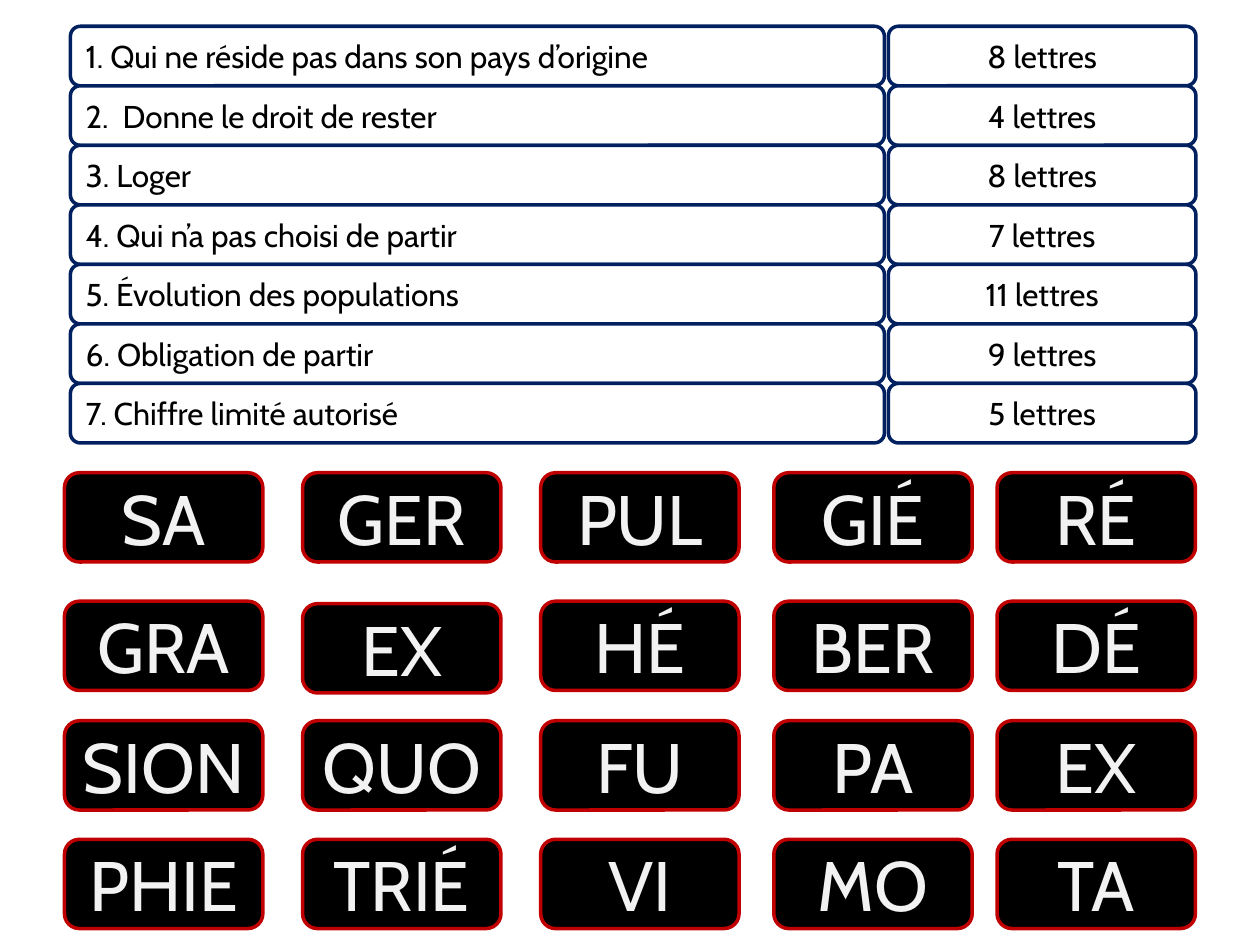
from dataclasses import dataclass

from pptx import Presentation
from pptx.dml.color import RGBColor
from pptx.enum.shapes import MSO_SHAPE
from pptx.enum.text import MSO_ANCHOR, PP_ALIGN
from pptx.util import Cm, Pt


@dataclass(frozen=True)
class BoxStyle:
    fill: RGBColor
    line: RGBColor
    text: RGBColor
    size: Pt


@dataclass(frozen=True)
class Theme:
    font = "Cabin"
    line_width = Pt(2)
    clue = BoxStyle(RGBColor(0xFF, 0xFF, 0xFF), RGBColor(0x00, 0x20, 0x60),
                    RGBColor(0x00, 0x00, 0x00), Pt(18))
    syllable = BoxStyle(RGBColor(0x00, 0x00, 0x00), RGBColor(0xC0, 0x00, 0x00),
                        RGBColor(0xF2, 0xF2, 0xF2), Pt(40))


theme = Theme()

prs = Presentation()
prs.slide_width, prs.slide_height = Cm(25.4), Cm(19.05)
slide = prs.slides.add_slide(prs.slide_layouts[6])


def add_box(text, left, top, width, height, style, align=PP_ALIGN.CENTER):
    box = slide.shapes.add_shape(MSO_SHAPE.ROUNDED_RECTANGLE,
                                 Cm(left), Cm(top), Cm(width), Cm(height))
    box.shadow.inherit = False
    box.fill.solid()
    box.fill.fore_color.rgb = style.fill
    box.line.color.rgb = style.line
    box.line.width = theme.line_width
    box.text_frame.vertical_anchor = MSO_ANCHOR.MIDDLE
    paragraph = box.text_frame.paragraphs[0]
    paragraph.text = text
    paragraph.alignment = align
    paragraph.font.name = theme.font
    paragraph.font.size = style.size
    paragraph.font.color.rgb = style.text


# Clues with the letter count of each answer
clues = [
    ("1. Qui ne réside pas dans son pays d’origine", 8),
    ("2.  Donne le droit de rester", 4),
    ("3. Loger", 8),
    ("4. Qui n’a pas choisi de partir", 7),
    ("5. Évolution des populations", 11),
    ("6. Obligation de partir", 9),
    ("7. Chiffre limité autorisé", 5),
]
clue_top, clue_height = 0.53, 1.2
for row, (clue, letters) in enumerate(clues):
    top = clue_top + row * clue_height
    add_box(clue, 1.42, top, 16.41, clue_height, theme.clue, PP_ALIGN.LEFT)
    add_box(f"{letters} lettres", 17.91, top, 6.2, clue_height, theme.clue)

# Syllable tiles
syllable_lefts = [1.3, 6.1, 10.9, 15.6, 20.1]
syllable_rows = [
    (9.53, ["SA", "GER", "PUL", "GIÉ", "RÉ"]),
    (12.12, ["GRA", "EX", "HÉ", "BER", "DÉ"]),
    (14.53, ["SION", "QUO", "FU", "PA", "EX"]),
    (16.92, ["PHIE", "TRIÉ", "VI", "MO", "TA"]),
]
lowered_tiles = {(1, 1): 0.05}  # (row, column): extra drop
for row, (top, syllables) in enumerate(syllable_rows):
    for column, (left, syllable) in enumerate(zip(syllable_lefts, syllables)):
        drop = lowered_tiles.get((row, column), 0)
        add_box(syllable, left, top + drop, 4, 1.8, theme.syllable)

prs.save("out.pptx")
